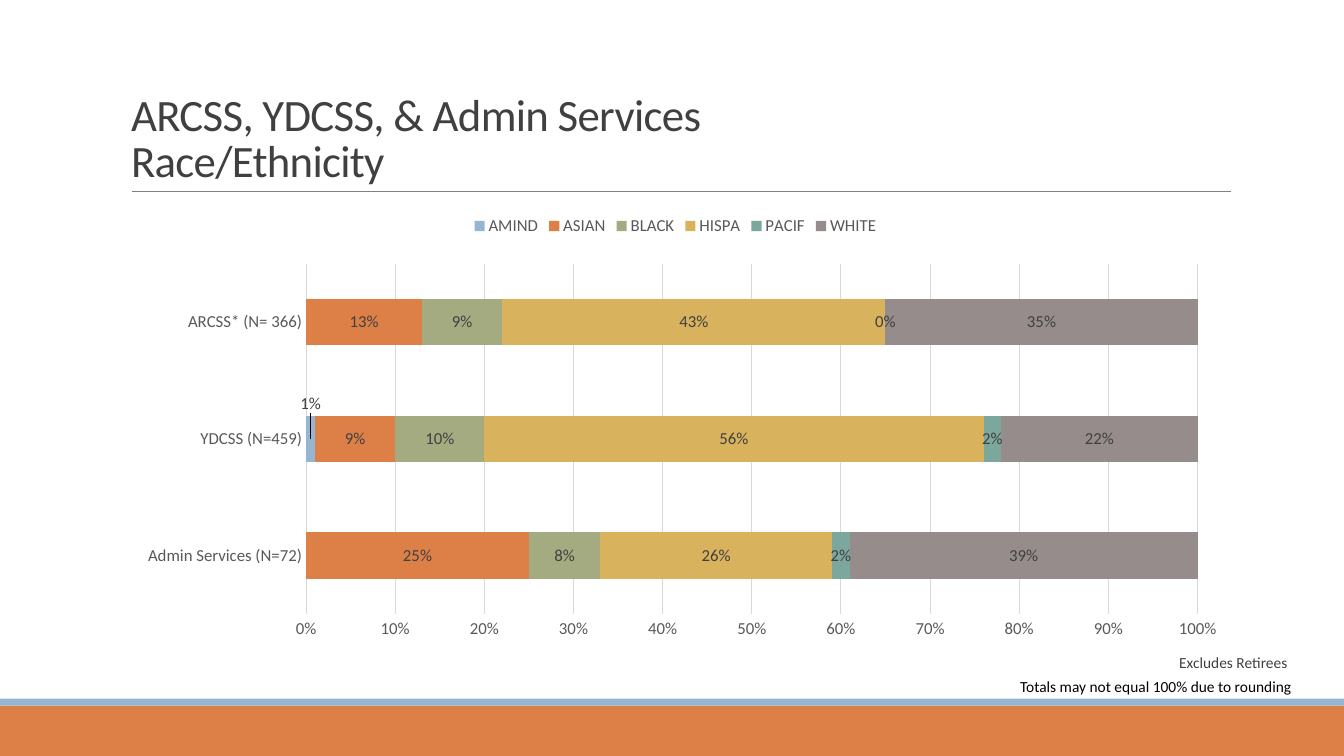
import pptx
import pptx.chart.data
import pptx.dml.color
import pptx.enum.chart
import pptx.enum.shapes
import pptx.enum.text
import pptx.oxml
import pptx.oxml.ns
import pptx.util

Pt = pptx.util.Pt
FONT = "Calibri"
COLORS = {
    "orange": "DD8047", "blue": "94B6D2", "rule": "808080", "title": "404040",
    "label": "404040", "axis": "595959", "grid": "D9D9D9", "black": "000000",
}
SERIES = {
    "AMIND": ("94B6D2", (0, 0.01, 0)),
    "ASIAN": ("DD8047", (0.25, 0.09, 0.13)),
    "BLACK": ("A5AB81", (0.08, 0.10, 0.09)),
    "HISPA": ("D8B25C", (0.26, 0.56, 0.43)),
    "PACIF": ("7BA79D", (0.02, 0.02, 0)),
    "WHITE": ("968C8C", (0.39, 0.22, 0.35)),
}
CATEGORIES = ("Admin Services (N=72)", "YDCSS (N=459)", "ARCSS* (N= 366)")


def rgb(value):
    return pptx.dml.color.RGBColor.from_string(value)


def set_attrs(obj, values):
    for name, value in values.items():
        setattr(obj, name, value)


def set_font(font, size, color):
    set_attrs(font, {"size": Pt(size), "name": FONT, "bold": False})
    font.color.rgb = rgb(COLORS[color])


def set_line(line, color, width):
    line.color.rgb = rgb(COLORS[color])
    line.width = Pt(width)


def chart_xml(text):
    return pptx.oxml.parse_xml(
        text.replace(">", " " + pptx.oxml.ns.nsdecls("c") + ">", 1))


def manual_layout(**values):
    items = "".join(f'<c:{name} val="{value}"/>' for name, value in values.items())
    return chart_xml(f"<c:layout><c:manualLayout>{items}</c:manualLayout></c:layout>")


def add_footer_bands(s, left, top, width, height):
    strip = 5
    bands = (("orange", top + strip, height - strip), ("blue", top, strip))
    for color, y, band_height in bands:
        sp = s.shapes.add_shape(pptx.enum.shapes.MSO_SHAPE.RECTANGLE,
                                Pt(left), Pt(y), Pt(width), Pt(band_height))
        sp.shadow.inherit = False
        sp.fill.solid()
        sp.fill.fore_color.rgb = rgb(COLORS[color])
        sp.line.fill.background()


def add_title(s, left, top, width, height):
    rule_y = Pt(top + height)
    rule = s.shapes.add_connector(pptx.enum.shapes.MSO_CONNECTOR.STRAIGHT,
                                  Pt(left + 8), rule_y, Pt(left + width + 1), rule_y)
    set_line(rule.line, "rule", 0.5)
    pptx.oxml.ns.qn("a:effectLst")
    rule._element.spPr.append(pptx.oxml.parse_xml(
        f"<a:effectLst {pptx.oxml.ns.nsdecls('a')}/>"))
    title = s.shapes.title
    set_attrs(title, {"left": Pt(left), "top": Pt(top),
                      "width": Pt(width), "height": Pt(height)})
    tf = title.text_frame
    set_attrs(tf, {"word_wrap": True,
                   "auto_size": pptx.enum.text.MSO_AUTO_SIZE.NONE,
                   "vertical_anchor": pptx.enum.text.MSO_ANCHOR.BOTTOM})
    tf.text = "ARCSS, YDCSS, & Admin Services\vRace/Ethnicity"
    p = tf.paragraphs[0]
    set_attrs(p, {"alignment": pptx.enum.text.PP_ALIGN.LEFT, "line_spacing": 0.85})
    for r in p.runs:
        set_font(r.font, 32, "title")
        r.font._element.set("spc", "-50")


def format_axes(chart):
    for axis in (chart.category_axis, chart.value_axis):
        set_attrs(axis, {"major_tick_mark": pptx.enum.chart.XL_TICK_MARK.NONE,
                         "minor_tick_mark": pptx.enum.chart.XL_TICK_MARK.NONE})
        set_font(axis.tick_labels.font, 12, "axis")
    set_line(chart.category_axis.format.line, "grid", 0.75)
    value_axis = chart.value_axis
    set_attrs(value_axis, {"minimum_scale": 0, "maximum_scale": 1, "major_unit": 0.1})
    value_axis.format.line.fill.background()
    set_line(value_axis.major_gridlines.format.line, "grid", 0.75)
    set_attrs(value_axis.tick_labels, {"number_format": "0%",
                                       "number_format_is_linked": False})


def format_series(series, color):
    series.format.fill.solid()
    series.format.fill.fore_color.rgb = rgb(color)
    labels = series.data_labels
    set_attrs(labels, {"show_value": True, "number_format": "0%",
                       "number_format_is_linked": False,
                       "position": pptx.enum.chart.XL_LABEL_POSITION.CENTER})
    set_font(labels.font, 12, "label")


def raise_small_label(series):
    label = series.points[1].data_label
    set_font(label.font, 12, "label")
    label.position = pptx.enum.chart.XL_LABEL_POSITION.CENTER
    labels = series.data_labels._element
    labels.find(pptx.oxml.ns.qn("c:dLbl")).insert(1, manual_layout(x=0, y=-0.08))
    for index in (0, 2):
        labels.insert(index, chart_xml(
            f'<c:dLbl><c:idx val="{index}"/><c:delete val="1"/></c:dLbl>'))


def add_ethnicity_chart(s, left, top, width, height):
    data = pptx.chart.data.CategoryChartData(number_format="0%")
    data.categories = CATEGORIES
    for name, (color, values) in SERIES.items():
        data.add_series(name, values)
    chart = s.shapes.add_chart(pptx.enum.chart.XL_CHART_TYPE.BAR_STACKED_100,
                               Pt(left), Pt(top), Pt(width), Pt(height), data).chart
    set_font(chart.font, 10, "black")
    set_attrs(chart, {"has_title": False, "has_legend": True})
    set_attrs(chart.legend, {"position": pptx.enum.chart.XL_LEGEND_POSITION.TOP,
                             "include_in_layout": False})
    set_font(chart.legend.font, 12, "axis")
    plot = chart.plots[0]
    set_attrs(plot, {"gap_width": 150, "overlap": 100, "vary_by_categories": False})
    format_axes(chart)
    for series in plot.series:
        format_series(series, SERIES[series.name][0])
    raise_small_label(plot.series[0])
    area = chart._chartSpace.chart.plotArea
    for layout in area.findall(pptx.oxml.ns.qn("c:layout")):
        area.remove(layout)
    area.insert(0, manual_layout(layoutTarget="inner", xMode="edge", yMode="edge",
                                 x=0.167, y=0.133, w=0.804, h=0.791))


def add_note(s, text, color, left, top, width, height):
    tf = s.shapes.add_textbox(Pt(left), Pt(top), Pt(width), Pt(height)).text_frame
    tf.word_wrap = True
    r = tf.paragraphs[0].add_run()
    r.text = text
    set_font(r.font, 11, color)


def main():
    prs = pptx.Presentation()
    set_attrs(prs, {"slide_width": Pt(960), "slide_height": Pt(540)})
    s = prs.slides.add_slide(prs.slide_layouts[5])
    add_footer_bands(s, 0, 499, 960, 41)
    add_title(s, 86.4, 22.5, 792, 114.2)
    add_ethnicity_chart(s, 86.4, 146.2, 792, 316.8)
    add_note(s, "Totals may not equal 100% due to rounding", "black", 721.5, 480.2, 229, 21)
    add_note(s, "Excludes Retirees", "label", 835.2, 463, 124, 21)
    prs.save("out.pptx")


if __name__ == "__main__":
    main()
